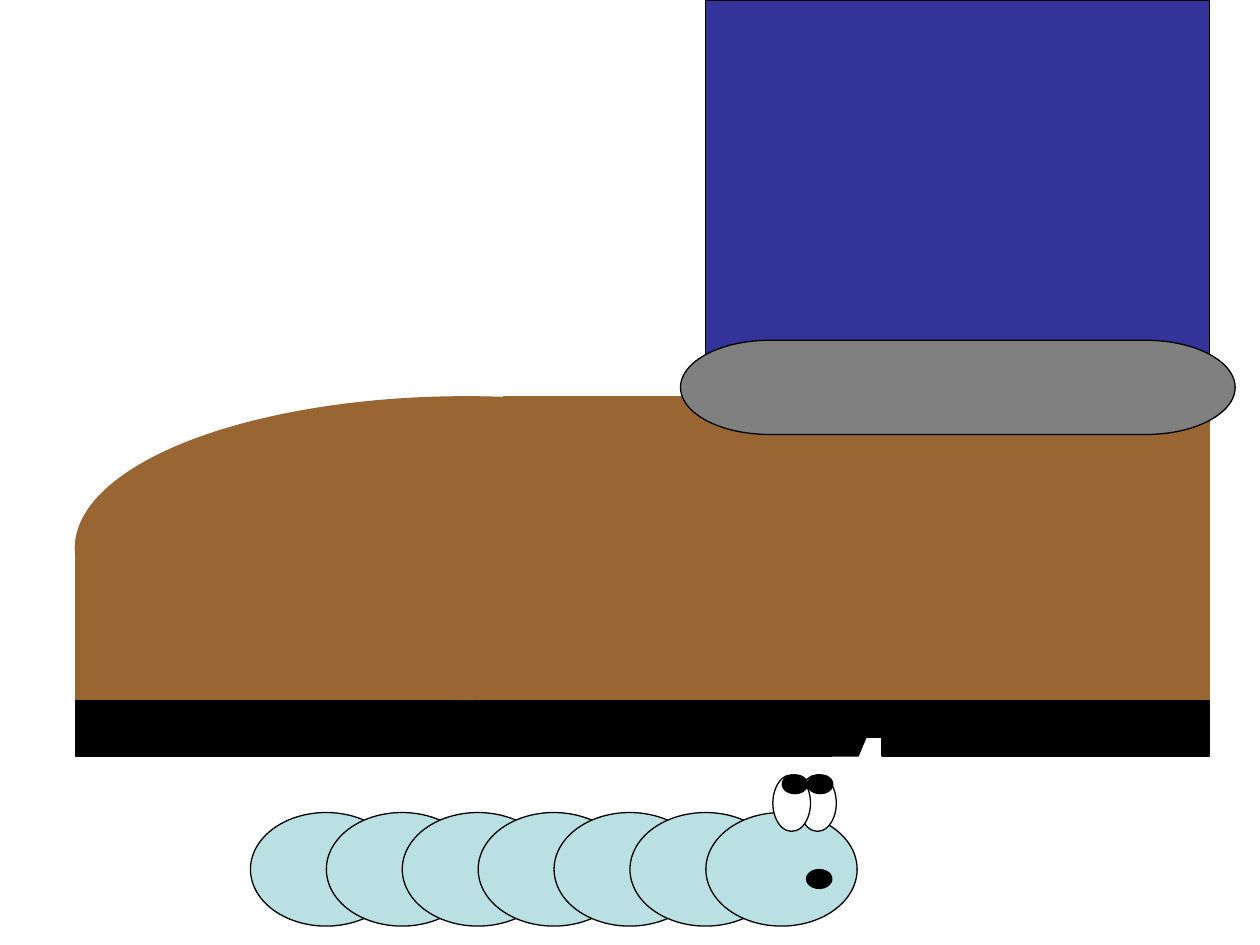
import pptx
import pptx.util
import pptx.dml.color
import pptx.enum.shapes

Cm = pptx.util.Cm
RGBColor = pptx.dml.color.RGBColor
Preset = pptx.enum.shapes.MSO_SHAPE

BLACK = RGBColor(0x00, 0x00, 0x00)
WHITE = RGBColor(0xFF, 0xFF, 0xFF)
WORM_BLUE = RGBColor(0xBB, 0xE0, 0xE3)
TROUSER_BLUE = RGBColor(0x33, 0x33, 0x99)
LEATHER = RGBColor(0x99, 0x66, 0x33)
CUFF_GREY = RGBColor(0x80, 0x80, 0x80)

SEGMENT_COUNT = 7
SEGMENT_STEP = 1.53
EYE_TOP = 15.62
SOLE_TOP = 14.1
SOLE_HEIGHT = 1.14


def add_part(slide, preset, left, top, width, height, fill, outline=BLACK):
    part = slide.shapes.add_shape(preset, Cm(left), Cm(top), Cm(width), Cm(height))
    part.shadow.inherit = False
    part.fill.solid()
    part.fill.fore_color.rgb = fill
    part.line.color.rgb = outline
    part.line.width = pptx.util.Pt(0.75)
    return part


def draw_worm(slide):
    for index in range(SEGMENT_COUNT):
        left = 5.05 + index * SEGMENT_STEP
        add_part(slide, Preset.OVAL, left, 16.38, 3.05, 2.29, WORM_BLUE)
    for eye_left in (16.1, 15.58):
        add_part(slide, Preset.OVAL, eye_left, EYE_TOP, 0.76, 1.14, WHITE)
    for pupil_left in (16.28, 15.77):
        add_part(slide, Preset.FLOWCHART_CONNECTOR, pupil_left, EYE_TOP, 0.51, 0.38, BLACK)
    add_part(slide, Preset.OVAL, 16.26, 17.53, 0.51, 0.38, BLACK)


def draw_sole(slide):
    for left, width in ((1.52, 15.24), (17.78, 6.6)):
        add_part(slide, Preset.RECTANGLE, left, SOLE_TOP, width, SOLE_HEIGHT, BLACK)
    heel_slope = add_part(slide, Preset.PARALLELOGRAM, 15.24, SOLE_TOP, 2.54, SOLE_HEIGHT, BLACK)
    heel_slope.adjustments[0] = 0.42
    add_part(slide, Preset.RECTANGLE, 16.76, SOLE_TOP, 1.02, 0.76, BLACK)


def draw_shoe_upper(slide):
    add_part(slide, Preset.OVAL, 1.52, 8, 15.75, 6.1, LEATHER, LEATHER)
    add_part(slide, Preset.RECTANGLE, 1.52, 11.05, 22.86, 3.05, LEATHER, LEATHER)
    add_part(slide, Preset.RECTANGLE, 10.16, 8, 14.22, 3.43, LEATHER, LEATHER)


def main():
    presentation = pptx.Presentation()
    presentation.slide_width = Cm(25.4)
    presentation.slide_height = Cm(19.05)
    slide = presentation.slides.add_slide(presentation.slide_layouts[6])
    draw_worm(slide)
    add_part(slide, Preset.RECTANGLE, 14.22, 0, 10.16, 7.62, TROUSER_BLUE)
    draw_sole(slide)
    draw_shoe_upper(slide)
    add_part(slide, Preset.FLOWCHART_TERMINATOR, 13.72, 6.86, 11.18, 1.9, CUFF_GREY)
    presentation.save("out.pptx")


if __name__ == "__main__":
    main()
